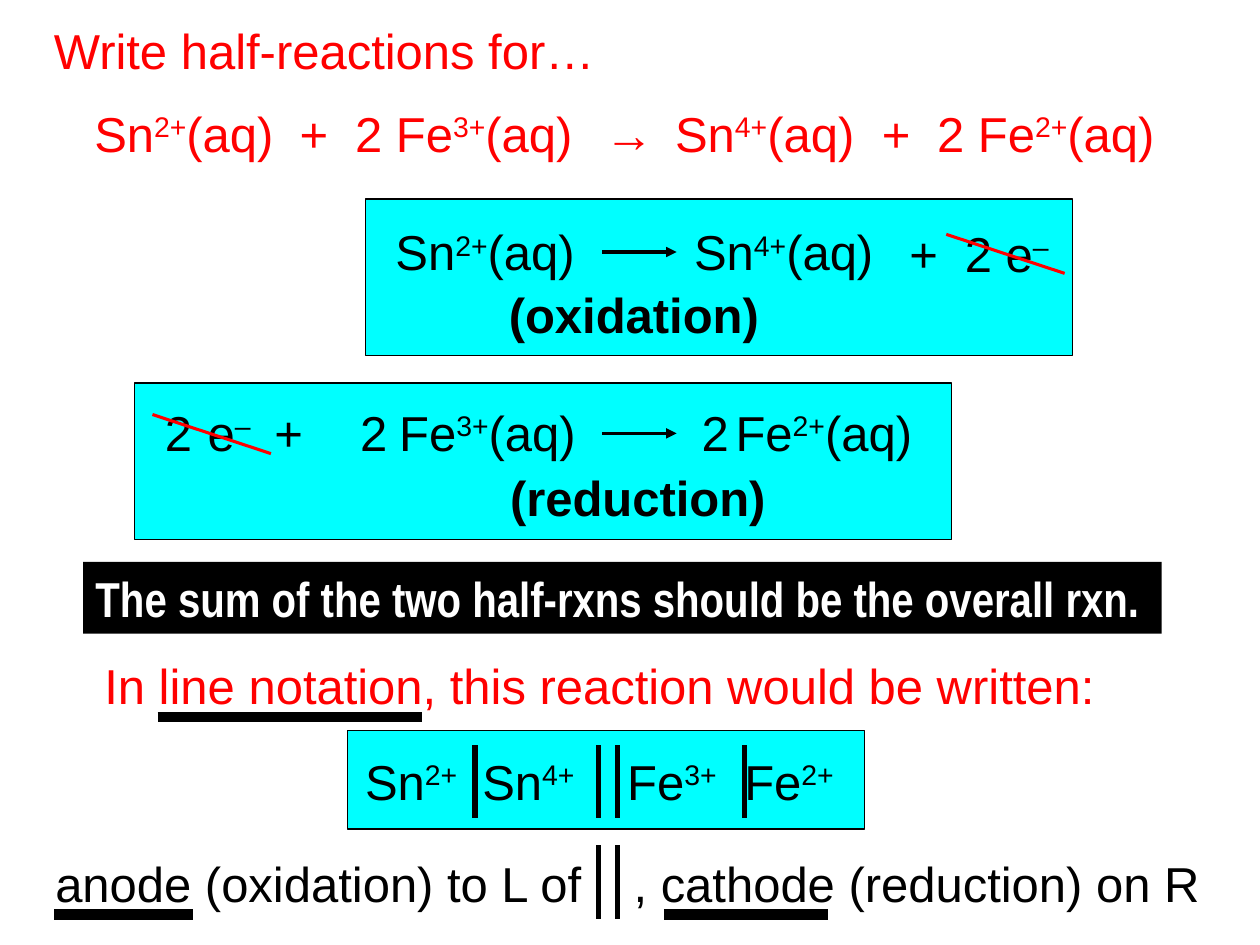
from lxml import etree
from pptx import Presentation
from pptx.dml.color import RGBColor
from pptx.enum import shapes, text
from pptx.oxml import ns
from pptx.util import Inches, Pt

RED = RGBColor(0xFF, 0, 0)
BLACK = RGBColor(0, 0, 0)
WHITE = RGBColor(0xFF, 0xFF, 0xFF)
CYAN = RGBColor(0, 0xFF, 0xFF)

deck = Presentation()
deck.slide_width, deck.slide_height = Inches(10), Inches(7.5)
page = deck.slides.add_slide(deck.slide_layouts[6])


def write(box, lines, color=BLACK, bold=False, font="Arial", tabs=()):
    """Fill a shape with 28 pt lines; text between ^ marks is superscript."""
    frame = box.text_frame
    frame.word_wrap = True
    frame.margin_right = 0  # slack so that a line never wraps
    frame.vertical_anchor = text.MSO_ANCHOR.MIDDLE
    for number, line in enumerate(lines):
        para = frame.add_paragraph() if number else frame.paragraphs[0]
        para.alignment = text.PP_ALIGN.LEFT
        if number:
            para.space_before = Pt(14)
        for order, part in enumerate(line.split("^")):
            if not part:
                continue
            span = para.add_run()
            span.text = part
            span.font.name, span.font.size = font, Pt(28)
            span.font.bold, span.font.color.rgb = bold, color
            if order % 2:
                span.font._element.set("baseline", "30000")
        if tabs and "\t" in line:
            tab_list = etree.SubElement(para._p.get_or_add_pPr(), ns.qn("a:tabLst"))
            for stop in tabs:
                etree.SubElement(tab_list, ns.qn("a:tab"), pos=str(Inches(stop)), algn="l")


def draw_line(x1, y1, x2, y2, weight, color=BLACK, arrow=False):
    line = page.shapes.add_connector(
        shapes.MSO_CONNECTOR.STRAIGHT, Inches(x1), Inches(y1), Inches(x2), Inches(y2))
    line.line.color.rgb, line.line.width = color, Pt(weight)
    if arrow:
        etree.SubElement(line.line._get_or_add_ln(), ns.qn("a:tailEnd"), type="triangle")
    etree.SubElement(line._element.spPr, ns.qn("a:effectLst"))


# Panels: line notation, oxidation, reduction, then the black banner
for left, top, width, height, fill in [
    (2.76, 5.8, 4.1, 0.78, CYAN),
    (2.9, 1.58, 5.61, 1.24, CYAN),
    (1.07, 3.04, 6.48, 1.24, CYAN),
    (0.66, 4.46, 8.56, 0.57, BLACK),
]:
    panel = page.shapes.add_shape(shapes.MSO_SHAPE.RECTANGLE, Inches(left),
                                  Inches(top), Inches(width), Inches(height))
    panel.shadow.inherit = False
    panel.fill.solid()
    panel.fill.fore_color.rgb = fill
    if fill == CYAN:
        panel.line.color.rgb, panel.line.width = BLACK, Pt(0.75)
    else:
        panel.line.fill.background()
write(panel, ["The sum of the two half-rxns should be the overall rxn."],
      WHITE, bold=True, font="Arial Narrow")

# Heading with the overall reaction
heading = page.shapes.add_textbox(Inches(0.33), Inches(0.1), Inches(9.32), Inches(1.25))
write(heading, ["Write half-reactions for…",
                "\tSn^2+^(aq)\t+\t2 Fe^3+^(aq)\t→\tSn^4+^(aq)\t+\t2 Fe^2+^(aq)"],
      RED, tabs=(0.32, 1.95, 2.39, 4.37, 4.93, 6.57, 7.01))

# Single-line texts: left, top, width, wording, colour, bold, tab stops
for left, top, width, wording, color, bold, tabs in [
    (3.04, 1.71, 4.11, "Sn^2+^(aq)\tSn^4+^(aq)", BLACK, False, (2.37,)),
    (7.12, 1.72, 1.33, "+\t2 e^–^", BLACK, False, (0.44,)),
    (3.94, 2.21, 2.19, "(oxidation)", BLACK, True, ()),
    (1.21, 3.14, 0.42, "2", BLACK, False, ()),
    (1.55, 3.14, 1.01, "e^–^\t+", BLACK, False, (0.53,)),
    (2.76, 3.14, 0.42, "2", BLACK, False, ()),
    (3.07, 3.14, 4.4, "Fe^3+^(aq)\tFe^2+^(aq)", BLACK, False, (2.67,)),
    (5.47, 3.14, 0.42, "2", BLACK, False, ()),
    (3.95, 3.66, 2.24, "(reduction)", BLACK, True, ()),
    (0.73, 5.15, 8.38, "In line notation, this reaction would be written:", RED, False, ()),
    (2.8, 5.91, 4.14, "Sn^2+^\tSn^4+^\tFe^3+^\tFe^2+^", BLACK, False, (0.93, 2.08, 3.01)),
    (0.34, 6.72, 9.42, "anode (oxidation) to L of\t, cathode (reduction) on R",
     BLACK, False, (4.59,)),
]:
    box = page.shapes.add_textbox(Inches(left), Inches(top), Inches(width), Inches(0.57))
    write(box, [wording], color, bold, tabs=tabs)

# Reaction arrows
for y in (2, 3.44):
    draw_line(4.78, y, 5.37, y, 1.75, arrow=True)

# Strokes cancelling the electrons
for x, y in [(1.21, 3.29), (7.51, 1.86)]:
    draw_line(x, y, x + 0.94, y + 0.31, 1.75, RED)

# Phase and bridge bars
for x, top in [(3.77, 5.91), (5.91, 5.91), (4.75, 5.91), (4.9, 5.91), (4.75, 6.71), (4.9, 6.71)]:
    draw_line(x, top + 0.58, x, top, 3)

# Heavy underlines
for x1, x2, y in [(1.25, 3.35, 5.69), (0.43, 1.53, 7.26), (5.27, 6.57, 7.26)]:
    draw_line(x1, y, x2, y, 6)

deck.save("out.pptx")
